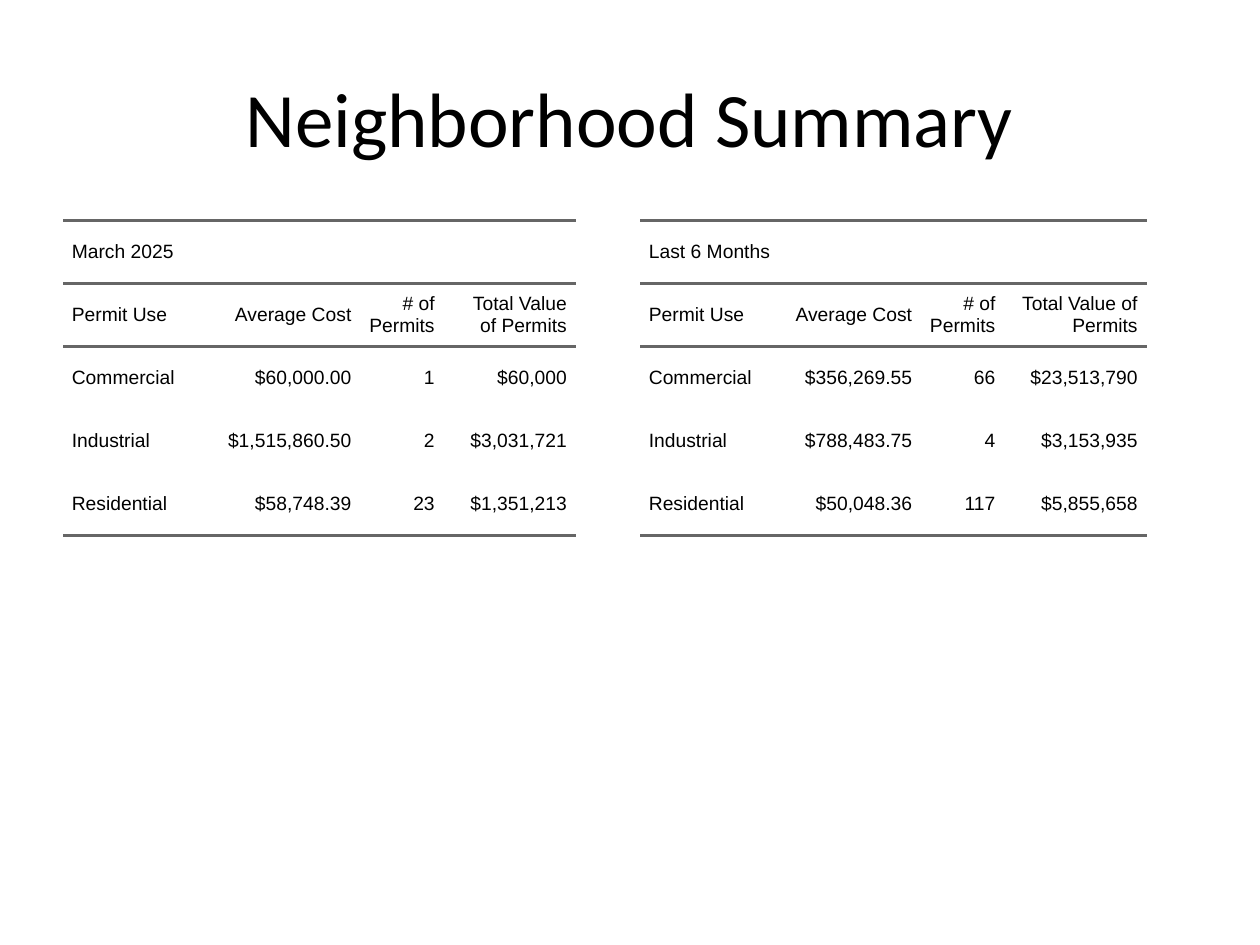
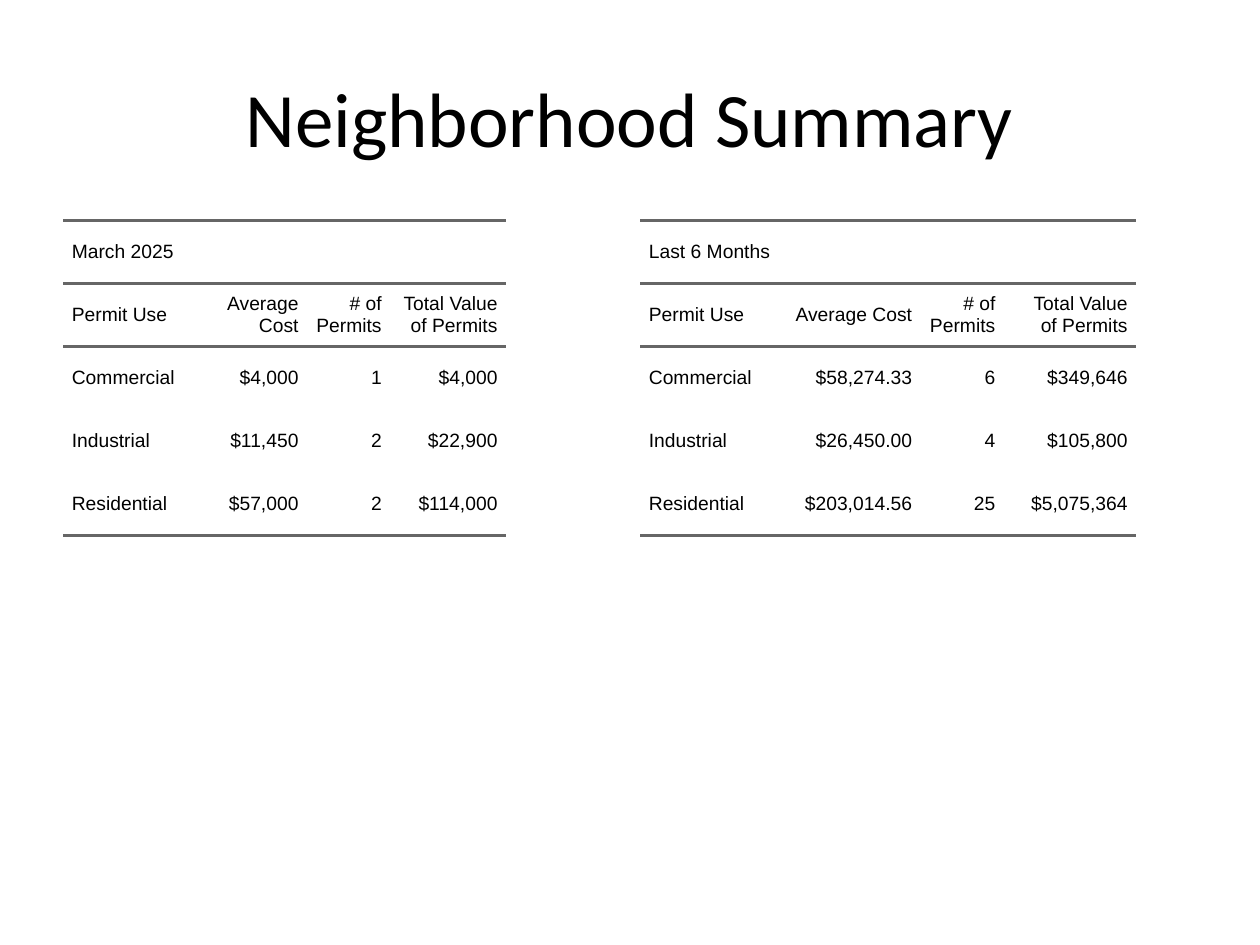
from lxml import etree
from pptx import Presentation
from pptx.dml.color import RGBColor
from pptx.enum.text import MSO_ANCHOR, PP_ALIGN
from pptx.oxml.ns import qn
from pptx.util import Inches, Pt

# Content: each slide holds a monthly and a half-year table
TITLE = "Neighborhood Summary"
PERIODS = ("March 2025", "Last 6 Months")
HEADERS = ("Permit Use", "Average Cost", "# of Permits", "Total Value of Permits")
USES = ("Commercial", "Industrial", "Residential")
NEIGHBORHOODS = [
    [
        {"widths": (1.1, 1.26, 0.66, 1.05),
         "values": [("$60,000.00", "1", "$60,000"),
                    ("$1,515,860.50", "2", "$3,031,721"),
                    ("$58,748.39", "23", "$1,351,213")]},
        {"widths": (1.1, 1.13, 0.66, 1.13),
         "values": [("$356,269.55", "66", "$23,513,790"),
                    ("$788,483.75", "4", "$3,153,935"),
                    ("$50,048.36", "117", "$5,855,658")]},
    ],
    [
        {"widths": (1.1, 0.84, 0.66, 0.92),
         "values": [("$4,000", "1", "$4,000"),
                    ("$11,450", "2", "$22,900"),
                    ("$57,000", "2", "$114,000")]},
        {"widths": (1.1, 1.13, 0.66, 1.05),
         "values": [("$58,274.33", "6", "$349,646"),
                    ("$26,450.00", "4", "$105,800"),
                    ("$203,014.56", "25", "$5,075,364")]},
    ],
]

# Shared look
BLACK = RGBColor(0x00, 0x00, 0x00)
RULE_GRAY = RGBColor(0x66, 0x66, 0x66)
RULE_WIDTH = Pt(1.5)
TITLE_FONT, TITLE_SIZE = "Calibri", Pt(44)
TABLE_FONT, TABLE_SIZE = "Arial", Pt(11)
LEFT, RIGHT = PP_ALIGN.LEFT, PP_ALIGN.RIGHT
CENTER = PP_ALIGN.CENTER
MIDDLE = MSO_ANCHOR.MIDDLE
NO_STYLE = "{2D5ABB26-0587-4C30-8999-92F81FD0307C}"

# Layout in inches
MARGIN, TABLE_TOP, TABLE_GAP = 0.5, 1.75, 0.16
TABLE_WIDTH, TABLE_HEIGHT, ROW_HEIGHT = 4.42, 4.95, 0.5
CELL_PADDING = 0.07


def style_font(paragraph, name, size):
    paragraph.font.name = name
    paragraph.font.size = size
    paragraph.font.color.rgb = BLACK


def add_title(slide):
    title = slide.shapes.title
    title.left, title.top = Inches(MARGIN), Inches(0.3)
    title.width, title.height = Inches(9), Inches(1.25)
    title.text_frame.text = TITLE
    title.text_frame.vertical_anchor = MIDDLE
    paragraph = title.text_frame.paragraphs[0]
    paragraph.alignment = CENTER
    style_font(paragraph, TITLE_FONT, TITLE_SIZE)


def set_rules(cell, edges):
    """Draw gray rules on the given cell edges, in the order T, B."""
    properties = cell._tc.get_or_add_tcPr()
    for position, edge in enumerate(edges):
        line = etree.Element(qn(f"a:ln{edge}"), w=str(RULE_WIDTH))
        fill = etree.SubElement(line, qn("a:solidFill"))
        etree.SubElement(fill, qn("a:srgbClr"), val=str(RULE_GRAY))
        properties.insert(position, line)


def fill_cell(cell, text, alignment):
    cell.fill.background()
    cell.vertical_anchor = MIDDLE
    cell.margin_left = cell.margin_right = Inches(CELL_PADDING)
    cell.margin_top = cell.margin_bottom = 0
    cell.text = text
    paragraph = cell.text_frame.paragraphs[0]
    paragraph.alignment = alignment
    paragraph.space_before = paragraph.space_after = Pt(5)
    style_font(paragraph, TABLE_FONT, TABLE_SIZE)


def add_permit_table(slide, left, period, widths, values):
    rows = [(period, "", "", ""), HEADERS]
    rows += [(use, *numbers) for use, numbers in zip(USES, values)]
    frame = slide.shapes.add_table(
        len(rows), len(HEADERS), Inches(left), Inches(TABLE_TOP),
        Inches(TABLE_WIDTH), Inches(ROW_HEIGHT * len(rows)))
    table = frame.table
    table._tbl.tblPr.find(qn("a:tableStyleId")).text = NO_STYLE
    table.first_row = table.horz_banding = False
    for column, width in zip(table.columns, widths):
        column.width = Inches(width)
    frame.width, frame.height = Inches(TABLE_WIDTH), Inches(TABLE_HEIGHT)

    # Rules frame the period and header rows and close the table
    edges = ["TB", "TB"] + [""] * (len(USES) - 1) + ["B"]
    for row_index, row in enumerate(rows):
        for column_index, text in enumerate(row):
            cell = table.cell(row_index, column_index)
            fill_cell(cell, text, RIGHT if column_index else LEFT)
            set_rules(cell, edges[row_index])
    table.cell(0, 0).merge(table.cell(0, len(HEADERS) - 1))


def main():
    presentation = Presentation()
    presentation.slide_width, presentation.slide_height = Inches(10), Inches(7.5)
    title_only = presentation.slide_layouts.get_by_name("Title Only")
    for summaries in NEIGHBORHOODS:
        slide = presentation.slides.add_slide(title_only)
        add_title(slide)
        for index, (period, summary) in enumerate(zip(PERIODS, summaries)):
            left = MARGIN + index * (TABLE_WIDTH + TABLE_GAP)
            add_permit_table(slide, left, period, **summary)
    presentation.save("out.pptx")


if __name__ == "__main__":
    main()
